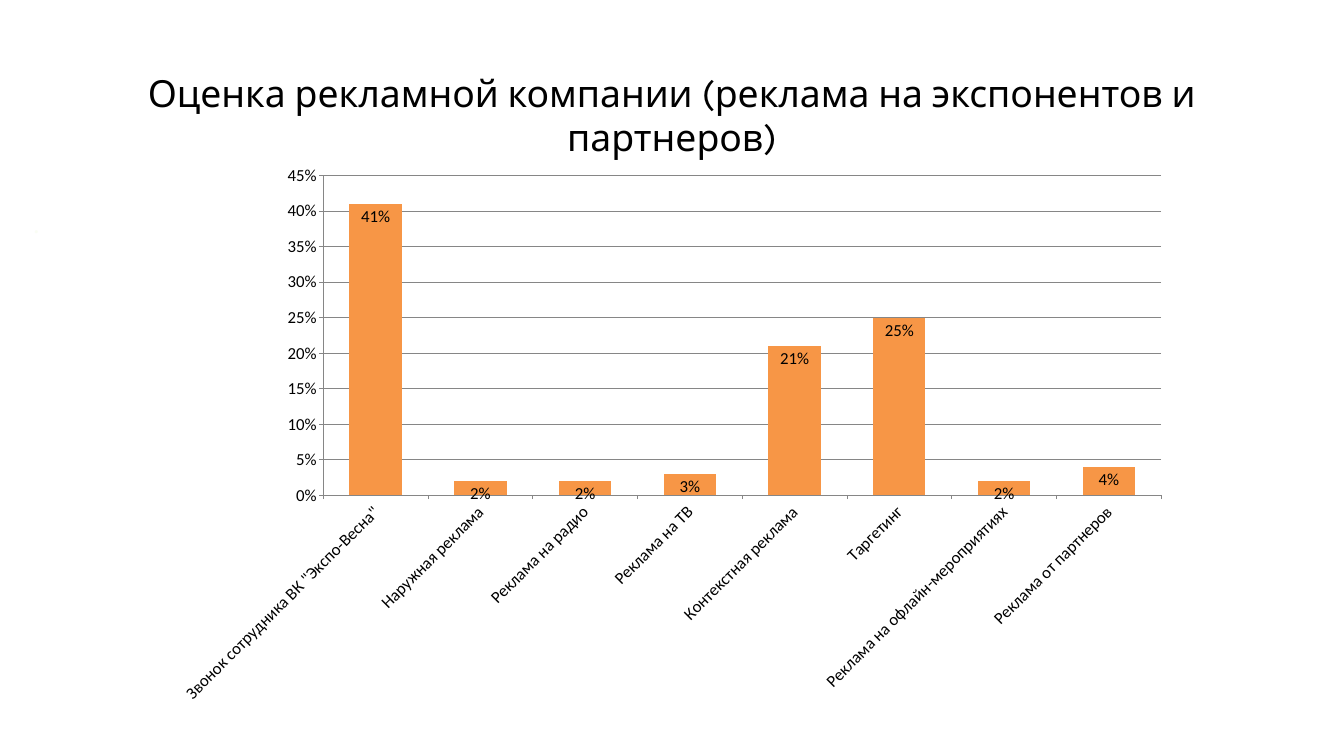
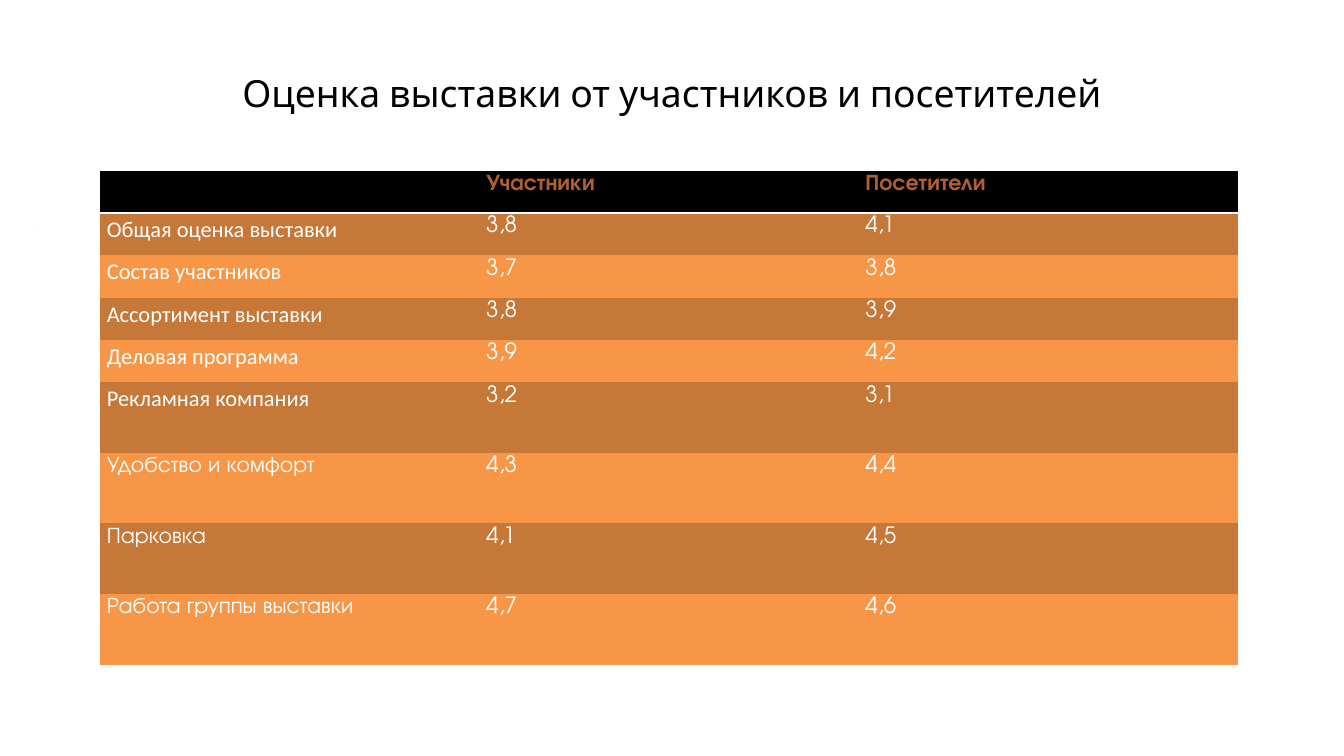
"""Build two slides with the ratings of an exhibition and its advertising."""
from dataclasses import dataclass

from lxml import etree
from pptx import Presentation
from pptx import util as u
from pptx.chart import data as chart_data
from pptx.dml.color import RGBColor
from pptx.enum import chart as ch
from pptx.enum import text
from pptx.oxml import ns


@dataclass(frozen=True)
class Theme:
    """Colours, fonts and type sizes shared by the slides."""

    ink: str = "000000"
    paper: str = "FFFFFF"
    orange: str = "F79646"
    brown: str = "C67838"
    rust: str = "B05F32"
    pale: str = "FAFDF4"
    rule: str = "868686"
    title_font: str = "Karla"
    mark_font: str = "Lato"
    label_font: str = "Calibri"
    value_font: str = "TeX Gyre Adventor"
    title_size: float = 40
    mark_size: float = 25.5
    table_size: float = 24
    chart_size: float = 18


THEME = Theme()
COLUMNS, ROWS = 20, 11.25
UNIT = u.Inches(1)

CHART_PLACE = (2.42, 2.29, 15.17, 8.33)
PLOT_PLACE = (2.39, 0.32, 12.47, 4.76)
CHANNELS = {
    'Звонок сотрудника ВК "Экспо-Весна"': 0.41,
    "Наружная реклама": 0.02,
    "Реклама на радио": 0.02,
    "Реклама на ТВ": 0.03,
    "Контекстная реклама": 0.21,
    "Таргетинг": 0.25,
    "Реклама на офлайн-мероприятиях": 0.02,
    "Реклама от партнеров": 0.04,
}
RATING_HEADER = ("", "Участники", "Посетители")
RATINGS = (
    ("Общая оценка выставки", "3,8", "4,1"),
    ("Состав участников", "3,7", "3,8"),
    ("Ассортимент выставки", "3,8", "3,9"),
    ("Деловая программа", "3,9", "4,2"),
    ("Рекламная компания", "3,2", "3,1"),
    ("Удобство и комфорт", "4,3", "4,4"),
    ("Парковка", "4,1", "4,5"),
    ("Работа группы выставки", "4,7", "4,6"),
)
LOW_ROWS = 6
LOW_HEIGHT, TALL_HEIGHT = 0.63, 1.05


def grid(*lengths):
    """Turn grid columns and rows into slide lengths."""
    return [u.Emu(round(length * UNIT)) for length in lengths]


def style(font, name, size, colour, bold=False):
    """Set the face, size and colour of a font."""
    font.name, font.size, font.bold = name, u.Pt(size), bold
    font.color.rgb = RGBColor.from_string(colour)


def add_words(slide, words, place, *look, centred=False):
    """Add a one-paragraph text box without insets."""
    frame = slide.shapes.add_textbox(*grid(*place)).text_frame
    frame.word_wrap = True
    frame.margin_left = frame.margin_right = 0
    frame.margin_top = frame.margin_bottom = 0
    frame.text = words
    paragraph = frame.paragraphs[0]
    if centred:
        paragraph.alignment = text.PP_ALIGN.CENTER
    style(paragraph.runs[0].font, *look)


def add_page(prs, title):
    """Add a blank slide with the shared title and the pale mark."""
    slide = prs.slides.add_slide(prs.slide_layouts[6])
    add_words(slide, title, (0.71, 1.04, COLUMNS - 2 * 0.71, 0.67),
              THEME.title_font, THEME.title_size, THEME.ink, centred=True)
    add_words(slide, ".", (0.5, 3.12, 8.51, 0.86),
              THEME.mark_font, THEME.mark_size, THEME.pale)
    return slide


def draw_rule(line):
    """Give an axis or grid line the shared thin grey."""
    line.color.rgb = RGBColor.from_string(THEME.rule)
    line.width = u.Pt(0.75)


def fix_plot_area(chart):
    """Hold the inner plot area at its place within the chart."""
    area = chart._chartSpace.chart.plotArea
    for layout in area.findall(ns.qn("c:layout")):
        area.remove(layout)
    layout = etree.Element(ns.qn("c:layout"))
    area.insert(0, layout)
    manual = etree.SubElement(layout, ns.qn("c:manualLayout"))
    settings = {"layoutTarget": "inner", "xMode": "edge", "yMode": "edge"}
    width, height = CHART_PLACE[2:]
    for side, length, whole in zip("xywh", PLOT_PLACE, (width, height) * 2):
        settings[side] = str(length / whole)
    for tag, value in settings.items():
        etree.SubElement(manual, ns.qn(f"c:{tag}"), val=value)


def add_channel_chart(slide):
    """Add the column chart of advertising channels."""
    shares = chart_data.CategoryChartData(number_format="0%")
    shares.categories = list(CHANNELS)
    shares.add_series("Series 1", list(CHANNELS.values()))
    chart = slide.shapes.add_chart(
        ch.XL_CHART_TYPE.COLUMN_CLUSTERED, *grid(*CHART_PLACE), shares).chart
    chart.has_title = chart.has_legend = False
    style(chart.font, THEME.label_font, THEME.chart_size, THEME.ink)
    fix_plot_area(chart)

    channel_axis, share_axis = chart.category_axis, chart.value_axis
    for axis in (channel_axis, share_axis):
        axis.major_tick_mark = ch.XL_TICK_MARK.OUTSIDE
        draw_rule(axis.format.line)
        style(axis.tick_labels.font, THEME.label_font, THEME.chart_size, THEME.ink)
    slant = channel_axis._element.find(ns.qn("c:txPr")).find(ns.qn("a:bodyPr"))
    slant.set("rot", "-2700000")
    share_axis.minimum_scale, share_axis.maximum_scale = 0, 0.45
    share_axis.major_unit = 0.05
    share_axis.tick_labels.number_format = "0%"
    share_axis.tick_labels.number_format_is_linked = False
    draw_rule(share_axis.major_gridlines.format.line)

    plot = chart.plots[0]
    plot.gap_width, plot.vary_by_categories = 100, False
    bars = plot.series[0].format.fill
    bars.solid()
    bars.fore_color.rgb = RGBColor.from_string(THEME.orange)
    plot.has_data_labels = True
    labels = plot.data_labels
    labels.show_value = True
    labels.number_format, labels.number_format_is_linked = "0%", False
    labels.position = ch.XL_LABEL_POSITION.INSIDE_END
    style(labels.font, THEME.label_font, THEME.chart_size, THEME.ink)


def fill_cell(cell, words, fill, *look):
    """Write and colour one table cell."""
    cell.fill.solid()
    cell.fill.fore_color.rgb = RGBColor.from_string(fill)
    cell.text = words
    for run in cell.text_frame.paragraphs[0].runs:
        style(run.font, *look)


def edge_cell(cell, ruled_side):
    """Hide the borders of a cell except a light rule on one side."""
    properties = cell._tc.get_or_add_tcPr()
    for place, side in enumerate("LRTB"):
        ruled = side == ruled_side
        edge = etree.Element(ns.qn(f"a:ln{side}"), w=str(u.Pt(2) if ruled else 0))
        paint = etree.SubElement(edge, ns.qn("a:solidFill" if ruled else "a:noFill"))
        if ruled:
            etree.SubElement(paint, ns.qn("a:srgbClr"), val=THEME.paper)
        properties.insert(place, edge)


def add_rating_table(slide):
    """Add the table of ratings by exhibitors and visitors."""
    row_count, column_count = len(RATINGS) + 1, len(RATING_HEADER)
    table = slide.shapes.add_table(
        row_count, column_count, *grid(1.49, 2.54, 16.93, 7.33)).table
    for index, row in enumerate(table.rows):
        row.height = grid(LOW_HEIGHT if index < LOW_ROWS - 1 else TALL_HEIGHT)[0]
    for column, heading in enumerate(RATING_HEADER):
        cell = table.cell(0, column)
        fill_cell(cell, heading, THEME.ink,
                  THEME.value_font, THEME.table_size, THEME.rust, True)
        edge_cell(cell, "B")
    for row, ratings in enumerate(RATINGS, start=1):
        band = THEME.brown if row % 2 else THEME.orange
        for column, words in enumerate(ratings):
            is_label = column == 0 and row < LOW_ROWS
            face = THEME.label_font if is_label else THEME.value_font
            cell = table.cell(row, column)
            fill_cell(cell, words, band, face, THEME.table_size, THEME.paper)
            edge_cell(cell, "T" if row == 1 else None)


def main():
    """Build and save the presentation."""
    prs = Presentation()
    prs.slide_width, prs.slide_height = grid(COLUMNS, ROWS)
    add_channel_chart(add_page(
        prs, "Оценка рекламной компании (реклама на экспонентов и партнеров)"))
    add_rating_table(add_page(prs, "Оценка выставки от участников и посетителей"))
    prs.save("out.pptx")


if __name__ == "__main__":
    main()
